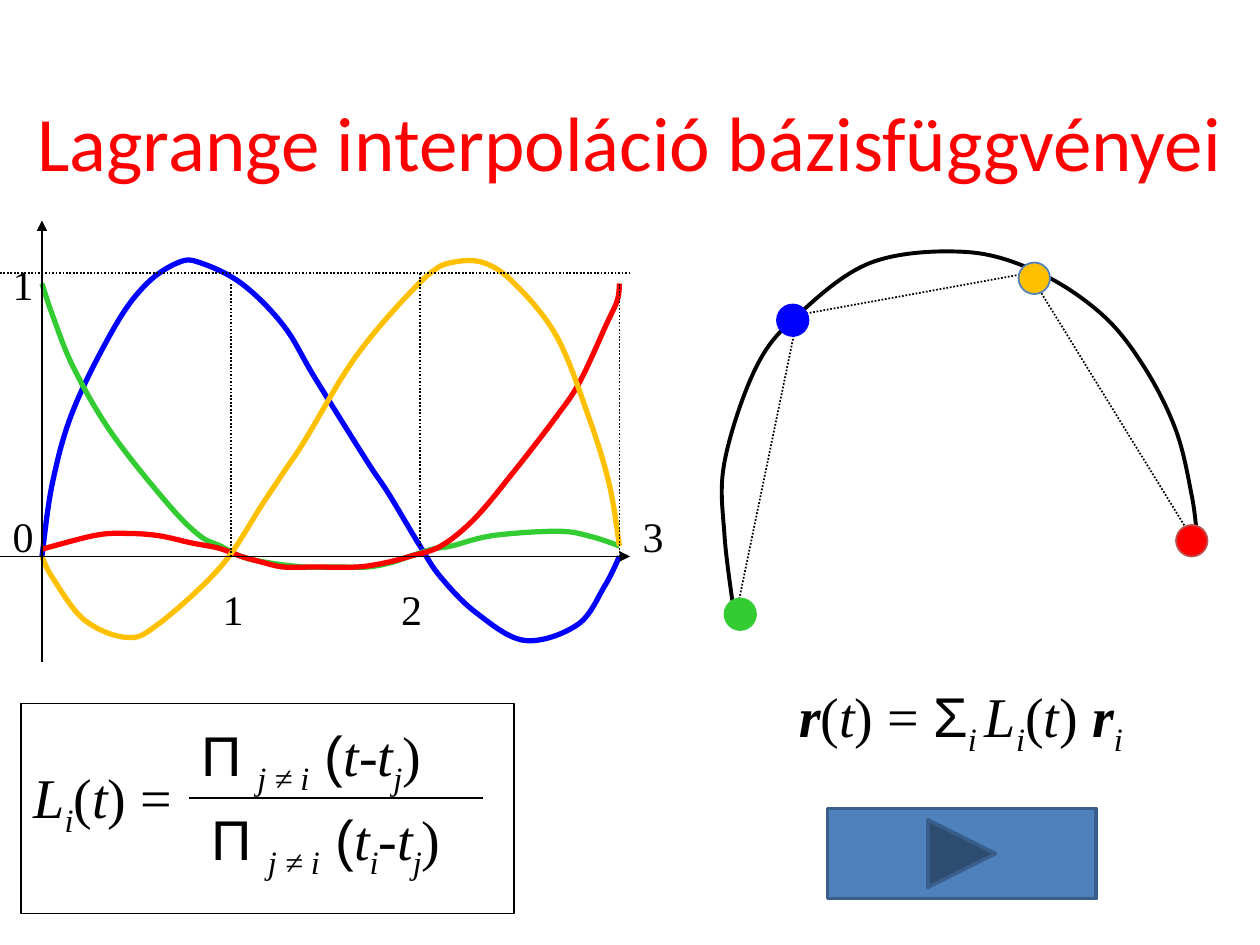
from lxml import etree
from pptx import Presentation
from pptx import util as u
from pptx.dml.color import RGBColor
from pptx.enum import dml, shapes, text
from pptx.oxml.ns import qn

# Every position is given in columns and rows of a 120 x 90 grid.
COLUMNS, ROWS = 120, 90
CELL = u.Inches(10) / COLUMNS

BLACK = RGBColor(0x00, 0x00, 0x00)
BLUE = RGBColor(0x00, 0x00, 0xFF)
GREEN = RGBColor(0x33, 0xCC, 0x33)
RED = RGBColor(0xFF, 0x00, 0x00)
YELLOW = RGBColor(0xFF, 0xC0, 0x00)
STEEL = RGBColor(0x4F, 0x81, 0xBD)
DARK_STEEL = RGBColor(0x3A, 0x5F, 0x8C)
BRICK = RGBColor(0xC0, 0x50, 0x4D)

SERIF, SANS = "Times New Roman", "Arial"

BASIS_CURVES = [
    (BLUE, [(4, 53), (5, 46), (7, 39), (11, 31), (14, 27), (17, 25), (19, 25),
            (23, 27), (27, 31), (30, 36), (35, 44), (37, 47), (40, 52), (42, 55),
            (45.4, 58.4), (50, 61), (55, 59.5), (57.6, 55.8), (59, 53)]),
    (GREEN, [(4, 27), (5, 30), (7, 35), (10.6, 41.2), (16, 48), (19, 51), (21, 52),
             (23, 53), (25.6, 53.6), (29, 54), (32, 54), (35, 54), (37.2, 53.6),
             (39, 53), (41.2, 52.3), (43, 52), (47, 51), (53.2, 50.6),
             (56.3, 51.1), (59, 52)]),
    (RED, [(4, 52.3), (9, 51), (11.8, 50.8), (15, 51), (18.2, 51.7), (20.8, 52.2),
           (23, 53), (24.8, 53.5), (27, 54), (30, 54), (34, 54), (36.7, 53.6),
           (39, 53), (42, 52), (45.2, 49.4), (48.8, 45.1), (52.9, 39.8),
           (55.2, 36.4), (57.8, 30.8), (58.8, 28.6), (59, 27)]),
    (YELLOW, [(4, 53), (5, 55), (8, 59), (12, 60.7), (15, 59.5), (21, 54), (25, 48),
              (27, 45), (29, 42), (32.6, 35.9), (35, 32.5), (38, 29), (41, 26),
              (43, 25), (46, 25), (49, 27), (53, 32), (56, 39.5), (58, 46),
              (59, 52)]),
]
SPLINE = [(70, 59), (69, 51), (69, 44), (72, 35), (76, 30), (83, 25), (92, 24),
          (99, 26), (105, 30), (109, 35), (112, 41), (113.5, 47.2), (114, 51)]
CONTROL_POLYGON = [(70, 59), (76, 30), (98, 26), (114, 52)]
CONTROL_POINTS = [(74, 29, BLUE, BLUE), (97, 25, YELLOW, STEEL),
                  (112, 50, RED, BRICK), (69, 57, GREEN, GREEN)]
AXIS_LABELS = [("0", 0, 48), ("1", 0, 24), ("3", 60, 48), ("1", 20, 55), ("2", 37, 55)]

# Run styles: b bold, i italic, s subscript, a sans font
SUM_FORMULA = [("r", "bi"), ("(", ""), ("t", "i"), (") = ", ""), ("Σ", "a"),
               ("i ", "is"), ("L", "i"), ("i", "is"), ("(", ""), ("t", "i"),
               (") ", ""), ("r", "bi"), ("i", "is")]
BASIS_NAME = [("L", "i"), ("i", "is"), ("(", ""), ("t", "i"), (") =", "")]
PRODUCT = [("Π ", "a"), ("j ≠ i", "is"), (" (", "a")]
NUMERATOR = PRODUCT + [("t-t", "i"), ("j", "is"), (")", "")]
DENOMINATOR = PRODUCT + [("t", "i"), ("i", "is"), ("-t", "i"), ("j", "is"), (")", "")]


def cells(*values):
    return [u.Emu(round(v * CELL)) for v in values]


def style_line(line, color, width=1, dotted=False):
    line.color.rgb = color
    line.width = u.Pt(width)
    if dotted:
        line.dash_style = dml.MSO_LINE.ROUND_DOT


def add_text(s, box, runs, size=32, align=None):
    tf = s.shapes.add_textbox(*cells(*box)).text_frame
    tf.word_wrap = False
    tf.auto_size = text.MSO_AUTO_SIZE.SHAPE_TO_FIT_TEXT
    p = tf.paragraphs[0]
    p.alignment = align
    for content, style in runs:
        r = p.add_run()
        r.text = content
        f = r.font
        f.size, f.color.rgb = u.Pt(size), BLACK
        f.name = SANS if "a" in style else SERIF
        f.bold, f.italic = "b" in style, "i" in style
        if "s" in style:
            f._element.set("baseline", "-25000")


def add_line(s, start, end, dotted=False, arrow=False):
    line = s.shapes.add_connector(shapes.MSO_CONNECTOR.STRAIGHT, *cells(*start, *end))
    style_line(line.line, BLACK, 1, dotted)
    if arrow:
        etree.SubElement(line.line._get_or_add_ln(), qn("a:tailEnd"), type="triangle")
    etree.SubElement(line._element.spPr, qn("a:effectLst"))


def add_polyline(s, points, color, width, dotted=False):
    first, *rest = [cells(*point) for point in points]
    builder = s.shapes.build_freeform(*first)
    builder.add_line_segments(rest, close=False)
    sp = builder.convert_to_shape()
    sp.shadow.inherit = False
    sp.fill.background()
    style_line(sp.line, color, width, dotted)
    return sp


def add_curve(s, points, color, width):
    """Draw a smooth curve: Catmull-Rom tangents turned into cubic Béziers."""
    sp = add_polyline(s, points, color, width)
    knots = [(int(pt.get("x")), int(pt.get("y"))) for pt in sp._element.iter(qn("a:pt"))]
    padded = [knots[0], *knots, knots[-1]]
    segments = list(sp._element.iter(qn("a:lnTo")))
    for segment, before, a, b, after in zip(segments, padded, knots, knots[1:], padded[3:]):
        handle_a = [k + (n - m) / 6 for k, m, n in zip(a, before, b)]
        handle_b = [k - (n - m) / 6 for k, m, n in zip(b, a, after)]
        bezier = etree.Element(qn("a:cubicBezTo"))
        for x, y in (handle_a, handle_b, b):
            etree.SubElement(bezier, qn("a:pt"), x=str(round(x)), y=str(round(y)))
        segment.getparent().replace(segment, bezier)


def add_preset(s, kind, box, fill, outline, width=1):
    sp = s.shapes.add_shape(kind, *cells(*box))
    sp.shadow.inherit = False
    if fill is None:
        sp.fill.background()
    else:
        sp.fill.solid()
        sp.fill.fore_color.rgb = fill
    style_line(sp.line, outline, width)


def add_title(s, content):
    title = s.shapes.title
    title.left, title.top, title.width, title.height = cells(0, 5.9, COLUMNS, 15)
    tf = title.text_frame
    tf.vertical_anchor = text.MSO_ANCHOR.MIDDLE
    p = tf.paragraphs[0]
    p.alignment = text.PP_ALIGN.CENTER
    r = p.add_run()
    r.text = content
    r.font.name, r.font.size, r.font.color.rgb = "Calibri", u.Pt(44), RED


def add_formulas(s):
    add_text(s, (74.9, 64.3, 34.3, 7.7), SUM_FORMULA)
    add_text(s, (2, 72, 15.7, 7.6), BASIS_NAME)
    add_text(s, (18, 68, 24.4, 7.6), NUMERATOR)
    add_text(s, (19, 76, 25.3, 7.6), DENOMINATOR)
    add_line(s, (18, 76), (46, 76))
    add_preset(s, shapes.MSO_SHAPE.RECTANGLE, (2, 67, 47, 20), None, BLACK)


def add_basis_plot(s):
    for color, points in BASIS_CURVES:
        add_curve(s, points, color, 3)
    add_line(s, (4, 63), (4, 21), arrow=True)
    add_line(s, (0, 53), (60, 53), arrow=True)
    add_line(s, (0, 26), (60, 26), dotted=True)
    for column, bottom, top in [(22, 53, 27), (40, 52, 26), (59, 53, 27)]:
        add_line(s, (column, bottom), (column, top), dotted=True)
    for label, column, row in AXIS_LABELS:
        add_text(s, (column, row, 4.4, 6), [(label, "")], 24, text.PP_ALIGN.CENTER)


def add_interpolated_curve(s):
    add_curve(s, SPLINE, BLACK, 2.25)
    add_polyline(s, CONTROL_POLYGON, BLACK, 1, dotted=True)
    for column, row, fill, outline in CONTROL_POINTS:
        add_preset(s, shapes.MSO_SHAPE.OVAL, (column, row, 3, 3), fill, outline)


def main():
    prs = Presentation()
    prs.slide_width, prs.slide_height = cells(COLUMNS, ROWS)
    s = prs.slides.add_slide(prs.slide_layouts[5])
    add_title(s, "Lagrange interpoláció bázisfüggvényei")
    add_formulas(s)
    add_basis_plot(s)
    add_interpolated_curve(s)
    add_preset(s, shapes.MSO_SHAPE.ACTION_BUTTON_FORWARD_OR_NEXT,
               (78.8, 77, 25.6, 8.6), STEEL, DARK_STEEL, 2)
    prs.save("out.pptx")


if __name__ == "__main__":
    main()
